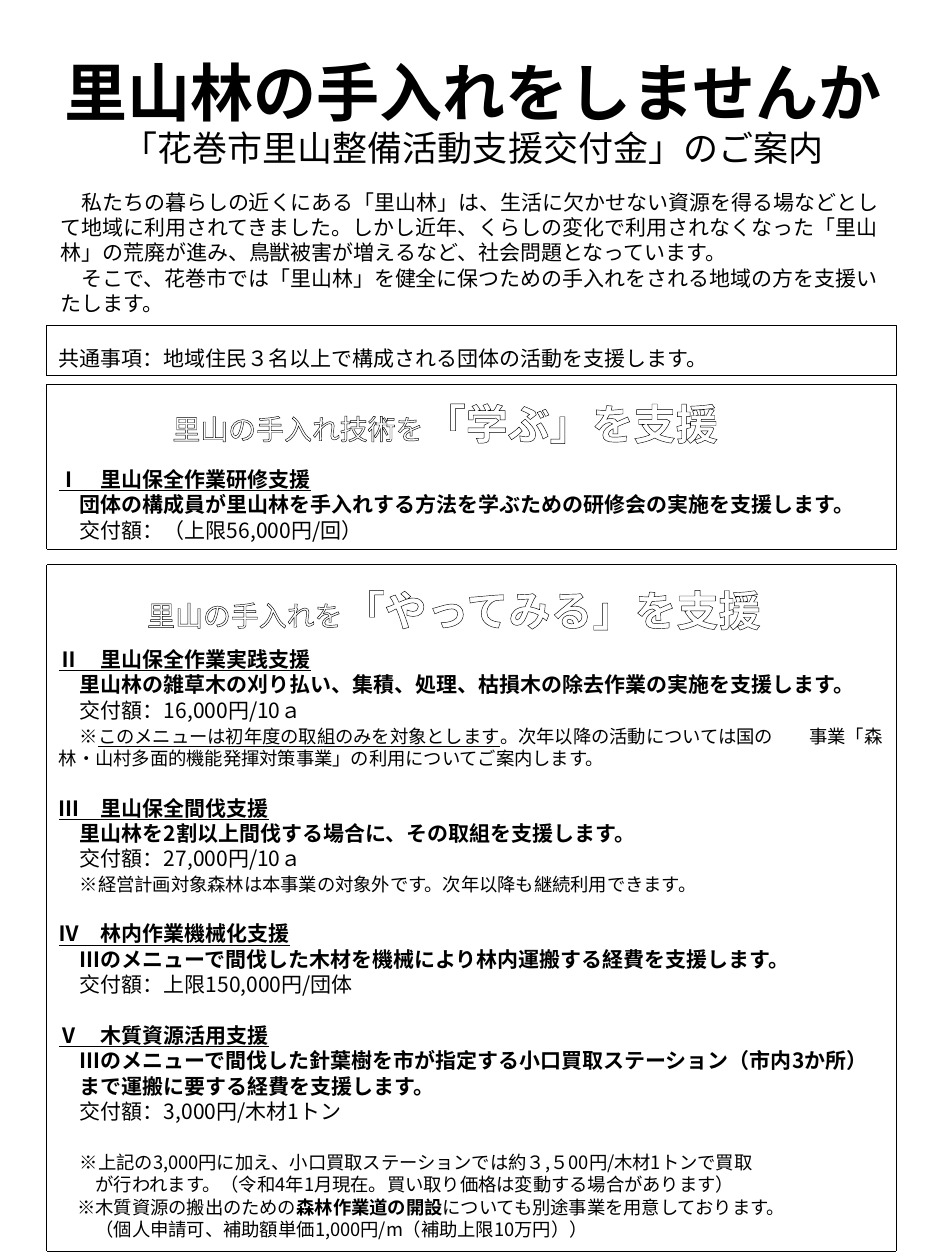
from lxml import etree
from pptx import Presentation
from pptx.dml.color import RGBColor
from pptx.enum.dml import MSO_LINE
from pptx.enum.shapes import MSO_SHAPE
from pptx.enum.text import MSO_ANCHOR, MSO_AUTO_SIZE, PP_ALIGN
from pptx.oxml import parse_xml
from pptx.oxml.ns import nsdecls, qn
from pptx.util import Inches, Pt

RECTANGLE = MSO_SHAPE.RECTANGLE
DOTTED = MSO_LINE.ROUND_DOT
TOP = MSO_ANCHOR.TOP
FIXED_SIZE = MSO_AUTO_SIZE.NONE
LEFT_ALIGN, CENTER = PP_ALIGN.LEFT, PP_ALIGN.CENTER

FONT = "Noto Sans CJK JP"
BLACK, WHITE = "000000", "FFFFFF"
LEFT, WIDTH = 0.37, 6.74
BODY, NOTE = 12, 10.5
BODY_LINE, NOTE_LINE = 14.5, 12.9
BANNER_ROOM = 0.65


def color(value):
    """Turn a hex string into a colour."""
    return RGBColor.from_string(value)


def style_span(span, size, bold=False, underline=False, fill=BLACK):
    """Format one run of text."""
    font = span.font
    font.size, font.bold, font.underline = Pt(size), bold, underline
    font.name = FONT
    font.color.rgb = color(fill)
    etree.SubElement(font._element, qn("a:ea"), typeface=FONT)


def outline_span(span):
    """Draw a thin black contour around the letters of a run."""
    span.font._element.insert(0, parse_xml(
        f'<a:ln {nsdecls("a")} w="9525"><a:solidFill>'
        f'<a:srgbClr val="{BLACK}"/></a:solidFill></a:ln>'))


def prepare_frame(frame, margin_top=0.05):
    """Give a text frame wrapping, top anchoring and a fixed size."""
    frame.word_wrap = True
    frame.auto_size = FIXED_SIZE
    frame.vertical_anchor = TOP
    frame.margin_left = frame.margin_right = Inches(0.1)
    frame.margin_top, frame.margin_bottom = Inches(margin_top), Inches(0.05)


def line(*spans, height=BODY_LINE, before=0, indent=0, align=LEFT_ALIGN):
    """Describe a paragraph from (text, style) pairs."""
    return spans, height, before, indent, align


def heading(text, before=0):
    """Describe an underlined menu heading."""
    return line((text, dict(size=BODY, bold=True, underline=True)), before=before)


def body(text, bold=False):
    """Describe an indented line of body text."""
    return line((text, dict(size=BODY, bold=bold)), indent=BODY)


def note(*spans, before=0, indent=NOTE):
    """Describe a small note."""
    styled = [(text, dict(size=NOTE, **style)) for text, style in spans]
    return line(*styled, height=NOTE_LINE, before=before, indent=indent)


def write_lines(frame, lines):
    """Fill a text frame with described paragraphs."""
    for index, (spans, height, before, indent, align) in enumerate(lines):
        para = frame.add_paragraph() if index else frame.paragraphs[0]
        para.alignment = align
        para.line_spacing = Pt(height)
        para.space_before, para.space_after = Pt(before), Pt(0)
        properties = para._p.get_or_add_pPr()
        properties.set("marL", "0")
        properties.set("indent", str(Pt(indent)))
        for text, style in spans:
            span = para.add_run()
            span.text = text
            style_span(span, **style)


def add_title(page, lines):
    """Place the title and its subtitle."""
    title = page.shapes.title
    title.left, title.top = Inches(LEFT), Inches(0.32)
    title.width, title.height = Inches(6.77), Inches(1.04)
    prepare_frame(title.text_frame)
    write_lines(title.text_frame, lines)


def add_text(page, left, top, width, height, lines):
    """Add a text box and return it."""
    box = page.shapes.add_textbox(*map(Inches, (left, top, width, height)))
    prepare_frame(box.text_frame)
    write_lines(box.text_frame, lines)
    return box


def add_panel(page, top, height, lines, margin_top=0.05):
    """Add a full-width dotted frame with text."""
    panel = page.shapes.add_shape(
        RECTANGLE, *map(Inches, (LEFT, top, WIDTH, height)))
    panel.shadow.inherit = False
    panel.fill.background()
    panel.line.color.rgb = color(BLACK)
    panel.line.width = Pt(0.25)
    panel.line.dash_style = DOTTED
    prepare_frame(panel.text_frame, margin_top)
    write_lines(panel.text_frame, lines)


def add_banner(page, left, top, width, lead, main_text):
    """Add an outlined banner with a small lead and a large main part."""
    spans = ((lead, dict(size=16, fill=WHITE)),
             (main_text, dict(size=24, bold=True, fill=WHITE)))
    box = add_text(page, left, top, width, 0.5, [line(*spans, height=31.5)])
    for span in box.text_frame.paragraphs[0].runs:
        outline_span(span)


def main():
    """Build the leaflet."""
    deck = Presentation()
    deck.slide_width, deck.slide_height = Inches(7.5), Inches(10)
    page = deck.slides.add_slide(deck.slide_layouts[5])

    add_title(page, [
        line(("里山林の手入れをしませんか", dict(size=36, bold=True)),
             height=47, align=CENTER),
        line(("「花巻市里山整備活動支援交付金」のご案内", dict(size=20)),
             height=22.6, align=CENTER),
    ])
    add_panel(page, 3.05, 1.31, [
        heading("Ⅰ　里山保全作業研修支援"),
        body("団体の構成員が里山林を手入れする方法を学ぶための研修会の実施を支援します。", True),
        body("交付額：（上限56,000円/回）"),
    ], BANNER_ROOM)
    add_banner(page, 1.27, 3.07, 4.58, "里山の手入れ技術を", "「学ぶ」を支援")
    add_panel(page, 4.48, 5.45, [
        heading("Ⅱ　里山保全作業実践支援"),
        body("里山林の雑草木の刈り払い、集積、処理、枯損木の除去作業の実施を支援します。", True),
        body("交付額：16,000円/10ａ"),
        note(("※", {}),
             ("このメニューは初年度の取組のみを対象とします", dict(underline=True)),
             ("。次年以降の活動については国の　　事業「森林・山村多面的機能発揮対策事業」"
              "の利用についてご案内します。", {}), before=1, indent=BODY),
        heading("Ⅲ　里山保全間伐支援", BODY_LINE),
        body("里山林を2割以上間伐する場合に、その取組を支援します。", True),
        body("交付額：27,000円/10ａ"),
        note(("※経営計画対象森林は本事業の対象外です。次年以降も継続利用できます。", {}),
             before=1, indent=BODY),
        heading("Ⅳ　林内作業機械化支援", BODY_LINE),
        body("Ⅲのメニューで間伐した木材を機械により林内運搬する経費を支援します。", True),
        body("交付額：上限150,000円/団体"),
        heading("Ⅴ　木質資源活用支援", BODY_LINE),
        body("Ⅲのメニューで間伐した針葉樹を市が指定する小口買取ステーション（市内3か所）", True),
        body("まで運搬に要する経費を支援します。", True),
        body("交付額：3,000円/木材1トン"),
        note(("※上記の3,000円に加え、小口買取ステーションでは約３,５00円/木材1トンで買取", {}),
             before=15, indent=BODY),
        note(("が行われます。（令和4年1月現在。買い取り価格は変動する場合があります）", {}),
             indent=2 * NOTE),
        note(("※木質資源の搬出のための", {}),
             ("森林作業道の開設", dict(bold=True)),
             ("についても別途事業を用意しております。", {})),
        note(("（個人申請可、補助額単価1,000円/m（補助上限10万円））", {}),
             indent=2 * NOTE),
    ], BANNER_ROOM)
    add_banner(page, 1.07, 4.55, 5.33, "里山の手入れを", "「やってみる」を支援")
    add_text(page, 0.38, 1.45, WIDTH, 1.11, [
        body("私たちの暮らしの近くにある「里山林」は、生活に欠かせない資源を得る場などとして"
             "地域に利用されてきました。しかし近年、くらしの変化で利用されなくなった"
             "「里山林」の荒廃が進み、鳥獣被害が増えるなど、社会問題となっています。"),
        body("そこで、花巻市では「里山林」を健全に保つための手入れをされる地域の方を支援いたします。"),
    ])
    add_panel(page, 2.58, 0.4, [
        line(("共通事項：地域住民３名以上で構成される団体の活動を支援します。",
              dict(size=BODY)), height=22.7),
    ])
    deck.save("out.pptx")


if __name__ == "__main__":
    main()
